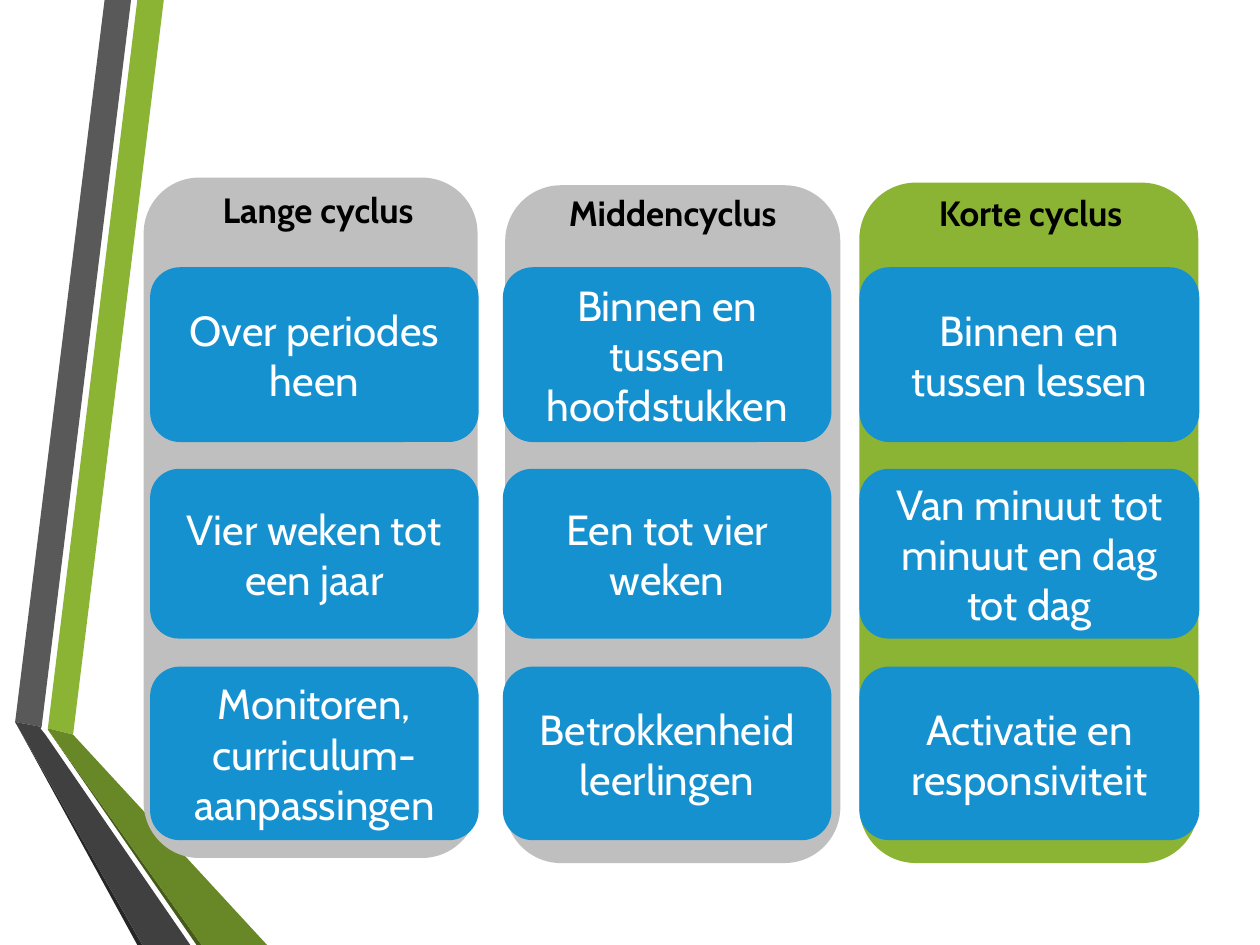
"""Build a slide comparing the long, middle and short cycle in three columns."""
from pptx import Presentation
from pptx.dml.color import RGBColor
from pptx.enum.shapes import MSO_SHAPE
from pptx.enum.text import MSO_ANCHOR, PP_ALIGN
from pptx.util import Inches, Pt

COLORS = {
    "green": "8BB434", "olive": "688727", "dark olive": "465A1A",
    "gray": "595959", "charcoal": "404040", "near black": "262626",
    "silver": "BFBFBF", "blue": "1691D0", "black": "000000", "white": "FFFFFF",
}
RIBBONS = [
    ("green", [(0.38, 5.78), (0.58, 5.83), (1.3, 0), (1.09, 0)]),
    ("gray", [(1.04, 0), (0.83, 0), (0.12, 5.73), (0.33, 5.77)]),
    ("near black", [(0.12, 5.73), (1.09, 7.5), (1.13, 7.5)]),
    ("dark olive", [(0.38, 5.79), (1.56, 7.5), (1.6, 7.5)]),
    ("olive", [(0.38, 5.79), (1.6, 7.5), (2.12, 7.5), (0.58, 5.83), (0.38, 5.78)]),
    ("charcoal", [(1.51, 7.5), (0.36, 5.83), (0.32, 5.78), (0.33, 5.77),
                  (0.12, 5.73), (1.13, 7.5)]),
]
COLUMNS = [
    ("Lange cyclus", "silver", (1.14, 1.41, 2.65, 5.4), (1.2, 1.45, 2.65), (1.2, 2.59),
     ["Over periodes heen", "Vier weken tot een jaar",
      "Monitoren, curriculum-aanpassingen"]),
    ("Middencyclus", "silver", (4.01, 1.47, 2.66, 5.38), (4.01, 1.47, 2.66), (4, 2.59),
     ["Binnen en tussen hoofdstukken", "Een tot vier weken",
      "Betrokkenheid leerlingen"]),
    ("Korte cyclus", "green", (6.82, 1.45, 2.69, 5.4), (6.84, 1.47, 2.68), (6.83, 2.68),
     ["Binnen en tussen lessen", "Van minuut tot minuut en dag tot dag",
      "Activatie en responsiviteit"]),
]
ROWS = [(2.13, 1.37), (3.73, 1.33), (5.3, 1.36)]
HEADING_HEIGHT = 0.44


def paint(shape, color, outlined=False):
    shape.shadow.inherit = False
    shape.fill.solid()
    shape.fill.fore_color.rgb = RGBColor.from_string(COLORS[color])
    if outlined:
        shape.line.color.rgb = RGBColor.from_string(COLORS[color])
        shape.line.width = Pt(1.25)
    else:
        shape.line.fill.background()


def write(shape, text, size, color, bold=False):
    shape.text_frame.word_wrap = True
    paragraph = shape.text_frame.paragraphs[0]
    paragraph.alignment = PP_ALIGN.CENTER
    run = paragraph.add_run()
    run.text = text
    run.font.name = "Cabin"
    run.font.size = Pt(size)
    run.font.bold = bold
    run.font.color.rgb = RGBColor.from_string(COLORS[color])


presentation = Presentation()
presentation.slide_width = Inches(10)
presentation.slide_height = Inches(7.5)
slide = presentation.slides.add_slide(presentation.slide_layouts[6])
shapes = slide.shapes

for color, corners in RIBBONS:
    points = [(Inches(x), Inches(y)) for x, y in corners]
    builder = shapes.build_freeform(*points[0])
    builder.add_line_segments(points[1:], close=True)
    paint(builder.convert_to_shape(), color)

for heading, color, panel_box, heading_box, (left, width), cards in COLUMNS:
    panel = shapes.add_shape(MSO_SHAPE.ROUNDED_RECTANGLE, *map(Inches, panel_box))
    paint(panel, color)
    label = shapes.add_textbox(*map(Inches, (*heading_box, HEADING_HEIGHT)))
    write(label, heading, 20, "black", bold=True)
    for (top, height), text in zip(ROWS, cards):
        card = shapes.add_shape(MSO_SHAPE.ROUNDED_RECTANGLE,
                                *map(Inches, (left, top, width, height)))
        paint(card, "blue", outlined=True)
        card.text_frame.vertical_anchor = MSO_ANCHOR.MIDDLE
        write(card, text, 24, "white")

presentation.save("out.pptx")
